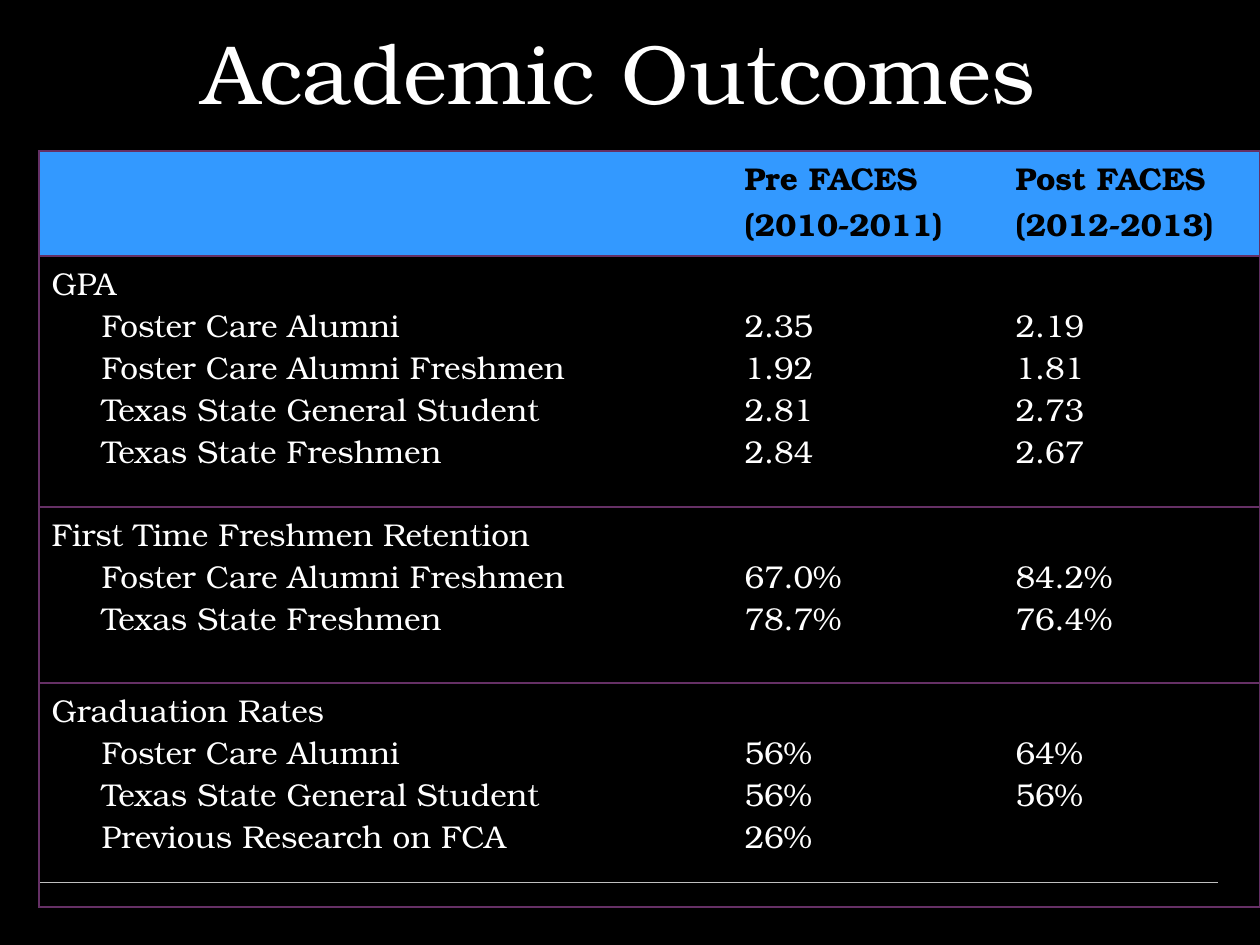
from lxml.etree import SubElement
from pptx import Presentation
from pptx.dml.color import RGBColor
from pptx.enum.shapes import MSO_CONNECTOR
from pptx.enum.text import MSO_ANCHOR, PP_ALIGN
from pptx.oxml import parse_xml
from pptx.oxml.ns import nsdecls, qn
from pptx.util import Emu, Pt

BLACK = RGBColor(0x00, 0x00, 0x00)
WHITE = RGBColor(0xFF, 0xFF, 0xFF)
BLUE = RGBColor(0x33, 0x99, 0xFF)
PLUM = RGBColor(0x65, 0x30, 0x65)
GREY = RGBColor(0xBF, 0xBF, 0xBF)
FONT = "TeX Gyre Bonum"
LINE = 42

HEAD = ["", "Pre FACES\n(2010-2011)", "Post FACES\n(2012-2013)"]
GROUPS = [
    ("GPA", [
        ("Foster Care Alumni", "2.35", "2.19"),
        ("Foster Care Alumni Freshmen", "1.92", "1.81"),
        ("Texas State General Student", "2.81", "2.73"),
        ("Texas State Freshmen", "2.84", "2.67"),
    ]),
    ("First Time Freshmen Retention", [
        ("Foster Care Alumni Freshmen", "67.0%", "84.2%"),
        ("Texas State Freshmen", "78.7%", "76.4%"),
    ]),
    ("Graduation Rates", [
        ("Foster Care Alumni", "56%", "64%"),
        ("Texas State General Student", "56%", "56%"),
        ("Previous Research on FCA", "26%", ""),
    ]),
]


def px(num):
    return Emu(num * 914400 // 126)


class Deck:
    def __init__(self, wide, high):
        self.prs = Presentation()
        self.prs.slide_width = px(wide)
        self.prs.slide_height = px(high)
        self.slide = self.prs.slides.add_slide(self.prs.slide_layouts[5])
        fill = self.slide.background.fill
        fill.solid()
        fill.fore_color.rgb = BLACK

    def style(self, para, size, color, bold=False):
        for item in [para, *para.runs]:
            font = item.font
            font.name, font.size, font.bold = FONT, Pt(size), bold
            font.color.rgb = color

    def title(self, text, box):
        shape = self.slide.shapes.title
        shape.left, shape.top, shape.width, shape.height = map(px, box)
        frame = shape.text_frame
        frame.text = text
        frame.vertical_anchor = MSO_ANCHOR.BOTTOM
        para = frame.paragraphs[0]
        para.alignment = PP_ALIGN.CENTER
        self.style(para, 48, WHITE)

    def rule(self, left, right, top):
        line = self.slide.shapes.add_connector(
            MSO_CONNECTOR.STRAIGHT, px(left), px(top), px(right), px(top))
        line.line.color.rgb = GREY
        line.line.width = Pt(0.25)
        SubElement(line._element.spPr, qn("a:effectLst"))

    def table(self, left, top, cols, rows):
        frame = self.slide.shapes.add_table(
            len(rows), len(cols), px(left), px(top), px(sum(cols)), px(sum(rows)))
        grid = frame.table
        grid.first_row = grid.horz_banding = False
        for col, wide in zip(grid.columns, cols):
            col.width = px(wide)
        for row, high in zip(grid.rows, rows):
            row.height = px(high)
            for num, cell in enumerate(row.cells):
                cell.fill.background()
                self.edge(cell, num == 0, num == len(cols) - 1)
        return grid

    def edge(self, cell, first, last):
        sides = [("L", first), ("R", last), ("T", True), ("B", True)]
        for spot, (side, shown) in enumerate(sides):
            paint = (f'<a:solidFill><a:srgbClr val="{PLUM}"/></a:solidFill>'
                     if shown else "<a:noFill/>")
            line = parse_xml(
                f'<a:ln{side} {nsdecls("a")} w="{Pt(1)}">{paint}</a:ln{side}>')
            cell._tc.get_or_add_tcPr().insert(spot, line)

    def cell(self, cell, text, color, top=6, step=LINE, bold=False):
        cell.margin_top = px(top)
        cell.text_frame.text = text
        for para in cell.text_frame.paragraphs:
            para.line_spacing = px(step)
            self.style(para, 18, color, bold)

    def indent(self, cell, size):
        for para in cell.text_frame.paragraphs[1:]:
            props = para._p.get_or_add_pPr()
            props.set("marL", str(px(size)))
            props.set("indent", "0")


def main():
    deck = Deck(1260, 945)
    deck.rule(39, 1218, 882)
    deck.title("Academic Outcomes", (42, -16, 1154, 144))
    grid = deck.table(39, 151, [693, 271, 257], [105, 251, 176, 224])
    for col, text in enumerate(HEAD):
        cell = grid.cell(0, col)
        cell.fill.solid()
        cell.fill.fore_color.rgb = BLUE
        deck.cell(cell, text, BLACK, top=3, step=46, bold=True)
    for row, (name, items) in enumerate(GROUPS, 1):
        labels, *values = zip(*items)
        deck.cell(grid.cell(row, 0), "\n".join([name, *labels]), WHITE)
        deck.indent(grid.cell(row, 0), 50)
        for col, nums in enumerate(values, 1):
            text = "\n".join(filter(None, nums))
            deck.cell(grid.cell(row, col), text, WHITE, top=6 + LINE)
    deck.prs.save("out.pptx")


if __name__ == "__main__":
    main()
